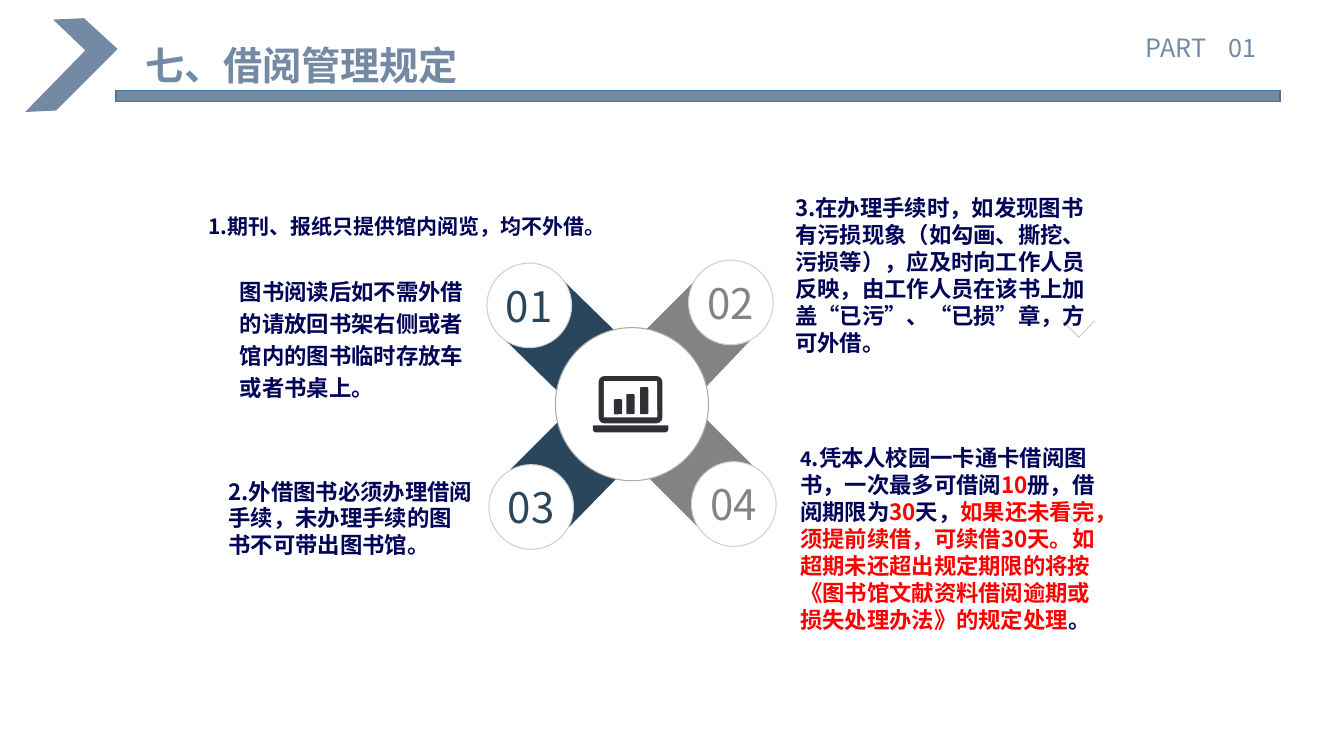
from pptx import Presentation
from pptx.dml.color import RGBColor as RGB
from pptx.enum.shapes import MSO_CONNECTOR as Link, MSO_SHAPE as Form
from pptx.enum.text import MSO_ANCHOR as Anchor, MSO_AUTO_SIZE as Auto, PP_ALIGN as Align
from pptx.oxml.ns import qn
from pptx.util import Pt
from lxml import etree

STEEL = RGB(0x74, 0x8A, 0xA4)
EDGE = RGB(0x43, 0x73, 0x9E)
NAVY = RGB(0x2A, 0x46, 0x5C)
GRAY = RGB(0x83, 0x83, 0x83)
RING = RGB(0xCF, 0xCF, 0xCF)
HUB = RGB(0xA6, 0xAA, 0xA9)
TICK = RGB(0xBF, 0xBF, 0xBF)
INK = RGB(0x2F, 0x30, 0x35)
TEXT = RGB(0x02, 0x04, 0x58)
RED = RGB(0xFF, 0x00, 0x00)
WHITE = RGB(0xFF, 0xFF, 0xFF)


def write(para, text, size=16, color=TEXT, bold=True, face="Noto Sans CJK SC"):
    run = para.add_run()
    run.text = text
    font = run.font
    font.size, font.bold, font.name = Pt(size), bold, face
    font.color.rgb = color
    east = etree.SubElement(font._element, qn("a:ea"))
    east.set("typeface", face)


class Page:
    def __init__(self, slide):
        self.shapes = slide.shapes

    def paint(self, shape, fill, line=None, width=0.75):
        shape.shadow.inherit = False
        shape.fill.solid()
        shape.fill.fore_color.rgb = fill
        if line is None:
            shape.line.fill.background()
        else:
            shape.line.color.rgb = line
            shape.line.width = Pt(width)
        return shape

    def form(self, kind, box, fill, line=None, width=0.75, round=()):
        shape = self.shapes.add_shape(kind, *map(Pt, box))
        for i, value in enumerate(round):
            shape.adjustments[i] = value
        return self.paint(shape, fill, line, width)

    def outline(self, points, fill):
        draw = self.shapes.build_freeform(*points[0], scale=Pt(1))
        draw.add_line_segments(points[1:])
        self.paint(draw.convert_to_shape(), fill)

    def line(self, start, end, color, width):
        link = self.shapes.add_connector(Link.STRAIGHT, *map(Pt, start + end))
        link.line.color.rgb = color
        link.line.width = Pt(width)
        etree.SubElement(link._element.spPr, qn("a:effectLst"))

    def frame(self, shape, inset, anchor=Anchor.TOP, wrap=True):
        body = shape.text_frame
        body.margin_left = body.margin_right = Pt(inset[0])
        body.margin_top = body.margin_bottom = Pt(inset[1])
        body.vertical_anchor, body.word_wrap = anchor, wrap
        return body

    def label(self, box, *parts, inset=(7.2, 3.6), anchor=Anchor.TOP,
              wrap=True, space=None, grow=True):
        shape = self.shapes.add_textbox(*map(Pt, box))
        body = self.frame(shape, inset, anchor, wrap)
        body.auto_size = Auto.SHAPE_TO_FIT_TEXT if grow else Auto.NONE
        para = body.paragraphs[0]
        para.line_spacing = space
        for text, style in parts:
            write(para, text, **style)

    def badge(self, x, y, text, color):
        disc = self.form(Form.OVAL, (x, y, 60.5, 60.5), WHITE, RING)
        para = self.frame(disc, (2, 2), Anchor.MIDDLE).paragraphs[0]
        para.alignment = Align.CENTER
        write(para, text, size=30, color=color, bold=False)


def main():
    deck = Presentation()
    deck.slide_width, deck.slide_height = Pt(960), Pt(540)
    page = Page(deck.slides.add_slide(deck.slide_layouts[6]))

    # Header
    page.outline([(38.2, 13.7), (60.5, 13), (83.5, 35.3), (40.3, 79.2),
                  (18, 79.9), (61.2, 36)], STEEL)
    page.label((98.6, 26.6, 332.6, 39.6),
               ("七、借阅管理规定", dict(size=28, color=STEEL)), inset=(5, 3))
    page.form(Form.RECTANGLE, (82.8, 64.8, 831.6, 7.9), STEEL, EDGE, 1)
    page.label((811.4, 19.4, 145.4, 28.8),
               ("PART    01", dict(size=18, color=STEEL, bold=False)))

    # Small tick marks
    for y in (229, 363):
        for x in (759, 782):
            page.line((x, y), (770.5, y + 12), TICK, 0.5)

    # Arms and numbered discs
    arms = [
        ("02", GRAY, (491.8, 185.8),
         [(499, 282.2), (484.6, 254.9), (456.5, 241.2), (497.5, 199.4), (539.3, 240.5)]),
        ("04", GRAY, (493.9, 329.8),
         [(499, 294.5), (486, 322.6), (458.6, 337), (500.4, 378), (541.4, 335.5)]),
        ("03", NAVY, (349.2, 331.9),
         [(403.2, 296.6), (416.9, 324), (445, 337), (403.9, 379.4), (362.2, 338.4)]),
        ("01", NAVY, (347.8, 187.9),
         [(403.2, 283.7), (416.9, 255.6), (444.2, 241.2), (401.8, 200.2), (361.4, 242.6)]),
    ]
    for text, color, spot, points in arms:
        page.outline(points, color)
        page.badge(*spot, text, color)

    # Hub with laptop icon
    page.form(Form.OVAL, (396.7, 234, 109.4, 109.4), WHITE, HUB)
    page.form(Form.ROUNDED_RECTANGLE, (427.7, 268.6, 45.4, 33.8), INK, round=[0.12])
    page.form(Form.ROUNDED_RECTANGLE, (431.3, 272.2, 38.2, 25.9), WHITE, round=[0.02])
    page.form(Form.ROUND_2_SAME_RECTANGLE, (423.4, 303.8, 54, 5.1), INK, round=[0.15, 0.5])
    for x, top in ((438.5, 285.1), (447.4, 281.5), (457.2, 276.5)):
        page.form(Form.ROUNDED_RECTANGLE, (x, top, 5.9, 295.9 - top), INK, round=[0.15])

    # Rules
    page.label((171.4, 194.5, 169.2, 100.8),
               ("图书阅读后如不需外借的请放回书架右侧或者馆内的图书临时存放车或者书桌上。", {}),
               inset=(0, 0), space=1.2, grow=False)
    page.label((145.4, 135.4, 202.3, 51.8),
               (" 1.期刊、报纸只提供馆内阅览，均不外借。", dict(size=15)),
               inset=(0, 0), anchor=Anchor.MIDDLE, wrap=False, grow=False)
    page.label((156.2, 337.7, 189.4, 65.5),
               ("2.外借图书必须办理借阅手续，未办理手续的图书不可带出图书馆。", {}))
    page.label((560.9, 135.4, 231.1, 123.8),
               ("3.在办理手续时，如发现图书有污损现象（如勾画、撕挖、污损等），应及时向工作人员"
                "反映，由工作人员在该书上加盖“已污”、“已损”章，方可外借。", {}))
    hot = dict(color=RED)
    page.label((564.5, 313.9, 227.5, 142.6),
               ("4", dict(size=14)),
               (".凭本人校园一卡通卡借阅图书，一次最多可借阅", {}),
               ("10", hot), ("册，借阅期限为", {}), ("30", hot), ("天，", {}),
               ("如果还未看完，须提前续借，可续借30天。如超期未还超出规定期限的将按"
                "《图书馆文献资料借阅逾期或损失处理办法》的规定处理", hot),
               ("。", {}))

    deck.save("out.pptx")


if __name__ == "__main__":
    main()
